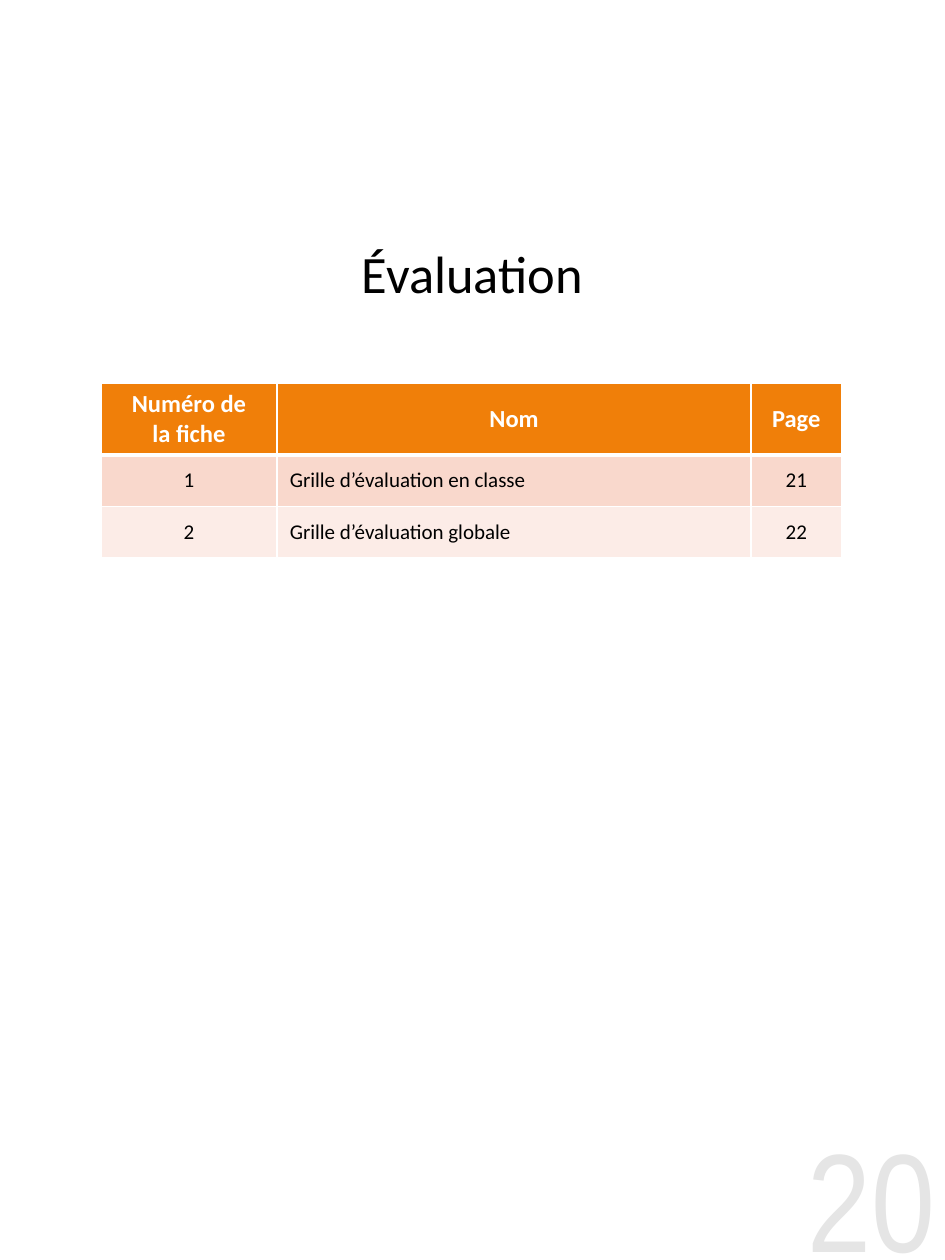
from lxml import etree
from pptx import Presentation
from pptx.dml.color import RGBColor
from pptx.enum import text
from pptx.oxml import ns
from pptx.util import Inches, Pt

WHITE = RGBColor(0xFF, 0xFF, 0xFF)
BLACK = RGBColor(0, 0, 0)
ORANGE = RGBColor(0xF0, 0x7F, 0x09)
ROSE = RGBColor(0xF9, 0xD8, 0xCC)
PALE = RGBColor(0xFC, 0xEC, 0xE7)
GREY = RGBColor(0xE5, 0xE5, 0xE5)

LEFT, MID, RIGHT = text.PP_ALIGN.LEFT, text.PP_ALIGN.CENTER, text.PP_ALIGN.RIGHT
COLS = [1.4, 3.76, 0.72]
ROWS = [0.57, 0.41, 0.41]
DATA = [
    ["Numéro de\nla fiche", "Nom", "Page"],
    ["1", "Grille d’évaluation en classe", "21"],
    ["2", "Grille d’évaluation globale", "22"],
]


def write(frame, words, size, color, align=MID, bold=False, face="Calibri"):
    for i, line in enumerate(words.split("\n")):
        para = frame.paragraphs[0] if i == 0 else frame.add_paragraph()
        para.alignment = align
        run = para.add_run()
        run.text = line
        font = run.font
        font.name, font.size, font.bold = face, Pt(size), bold
        font.color.rgb = color


def add_label(slide, box, words, size, color, anchor, **style):
    frame = slide.shapes.add_textbox(*map(Inches, box)).text_frame
    frame.word_wrap = True
    frame.vertical_anchor = anchor
    frame.margin_left = frame.margin_right = 0
    frame.margin_top = frame.margin_bottom = 0
    write(frame, words, size, color, **style)


def set_edges(cell, below):
    # Borders come before the fill in the cell properties
    props = cell._tc.get_or_add_tcPr()
    for i, (side, width) in enumerate(zip("LRTB", (1, 1, 1, below))):
        edge = etree.Element(ns.qn("a:ln" + side), w=str(Pt(width)))
        fill = etree.SubElement(edge, ns.qn("a:solidFill"))
        etree.SubElement(fill, ns.qn("a:srgbClr"), val=str(WHITE))
        props.insert(i, edge)


def add_index(slide, box):
    shape = slide.shapes.add_table(len(ROWS), len(COLS), *map(Inches, box))
    table = shape.table
    for col, width in zip(table.columns, COLS):
        col.width = Inches(width)
    for row, height in zip(table.rows, ROWS):
        row.height = Inches(height)

    for r, (line, fill) in enumerate(zip(DATA, (ORANGE, ROSE, PALE))):
        head = r == 0
        for c, words in enumerate(line):
            cell = table.cell(r, c)
            cell.fill.solid()
            cell.fill.fore_color.rgb = fill
            cell.vertical_anchor = text.MSO_ANCHOR.MIDDLE
            set_edges(cell, 3 if head else 1)
            write(cell.text_frame, words, 14 if head else 12,
                  WHITE if head else BLACK,
                  align=LEFT if c == 1 and not head else MID, bold=head)


def main():
    deck = Presentation()
    deck.slide_width, deck.slide_height = Inches(7.5), Inches(10)
    slide = deck.slides.add_slide(deck.slide_layouts[6])

    # Page number
    add_label(slide, (6, 8.83, 1.42, 1.17), "20", 80, GREY,
              text.MSO_ANCHOR.TOP, align=RIGHT, face="Arial Narrow")
    # Title
    add_label(slide, (1.17, 1.69, 5.16, 0.95), "Évaluation", 30, BLACK,
              text.MSO_ANCHOR.MIDDLE)
    # List of sheets
    add_index(slide, (0.8, 3.04, sum(COLS), sum(ROWS)))

    deck.save("out.pptx")


if __name__ == "__main__":
    main()
